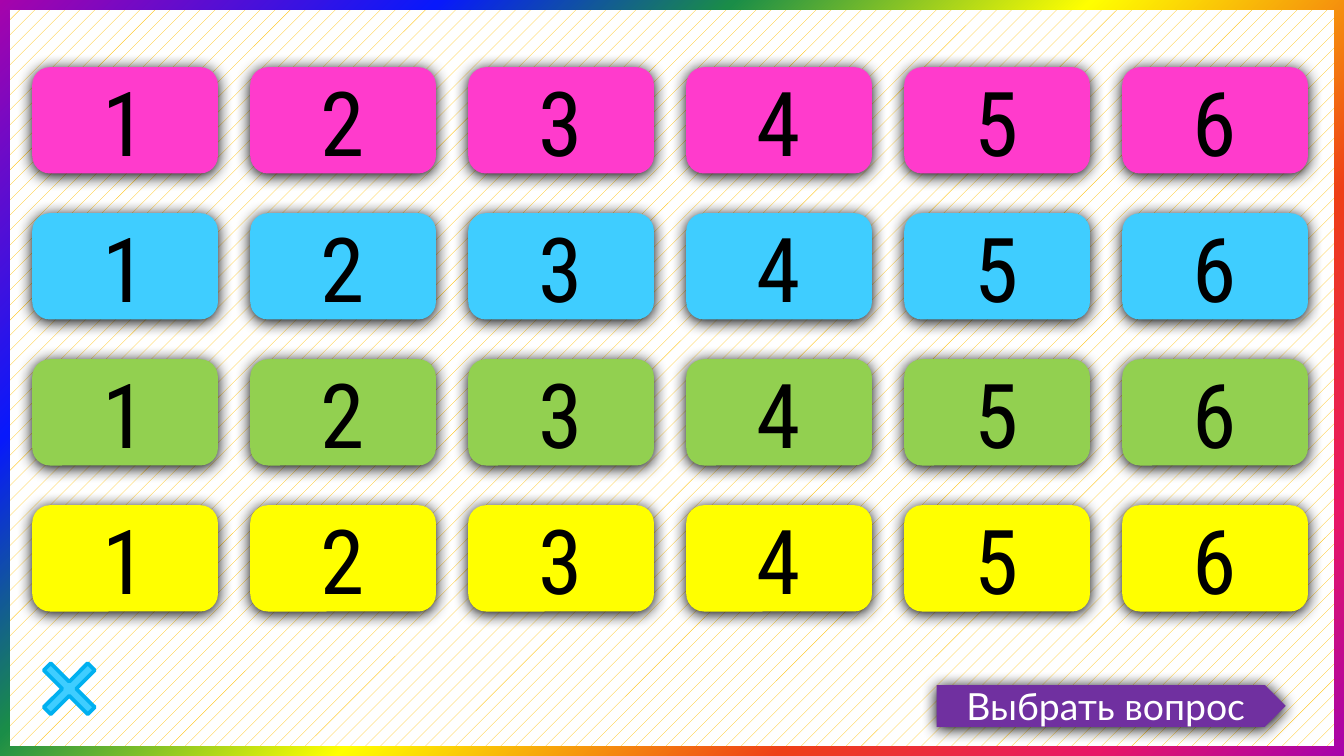
from dataclasses import dataclass

import lxml.etree
import pptx
import pptx.dml.color
import pptx.enum.dml
import pptx.enum.shapes
import pptx.enum.text
import pptx.oxml.ns
import pptx.shapes.autoshape
import pptx.slide
import pptx.util

Cm = pptx.util.Cm
Pt = pptx.util.Pt
Preset = pptx.enum.shapes.MSO_SHAPE


@dataclass(frozen=True)
class Theme:
    rows: tuple[str, ...] = ("FF3BCC", "3FCDFF", "92D050", "FFFF00")
    rainbow: tuple[tuple[int, str], ...] = (
        (0, "A603AB"), (21, "0819FB"), (35, "1A8D48"), (52, "FFFF00"),
        (73, "EE3F17"), (88, "E81766"), (100, "A603AB"),
    )
    black: str = "000000"
    white: str = "FFFFFF"
    stripe: str = "FFC000"
    banner: str = "7030A0"
    cross: str = "3FCDFF"
    cross_line: str = "00B0F0"
    number_font: str = "Roboto Condensed"
    number_size: int = 48
    banner_font: str = "Lato"
    banner_size: int = 20


@dataclass(frozen=True)
class Box:
    left: float
    top: float
    width: float
    height: float


@dataclass(frozen=True)
class Label:
    text: str
    font: str
    size: int
    color: str


THEME = Theme()
SLIDE_WIDTH, SLIDE_HEIGHT = 25.4, 14.29
FIRST_TILE = Box(0.61, 1.27, 3.51, 2.01)
COLUMNS = 6
COLUMN_STEP, ROW_STEP = 4.12, 2.76


def rgb(color: str) -> pptx.dml.color.RGBColor:
    return pptx.dml.color.RGBColor.from_string(color)


def add_element(parent: lxml.etree._Element, tag: str, **attributes: object) -> lxml.etree._Element:
    values = {name: str(value) for name, value in attributes.items()}
    return lxml.etree.SubElement(parent, pptx.oxml.ns.qn(tag), values)


def add_preset(slide: pptx.slide.Slide, preset: Preset, box: Box) -> pptx.shapes.autoshape.Shape:
    """Add a preset shape without line or shadow."""
    shape = slide.shapes.add_shape(
        preset, Cm(box.left), Cm(box.top), Cm(box.width), Cm(box.height))
    shape.shadow.inherit = False
    shape.line.fill.background()
    return shape


def add_shadow(shape: pptx.shapes.autoshape.Shape) -> None:
    effects = shape._element.spPr.find(pptx.oxml.ns.qn("a:effectLst"))
    shadow = add_element(effects, "a:outerShdw", blurRad=Pt(8.5), dist=Pt(1),
                         dir=90 * 60000, algn="t", rotWithShape=0)
    add_element(shadow, "a:srgbClr", val=THEME.black)


def add_button(slide: pptx.slide.Slide, preset: Preset, box: Box, fill: str, label: Label) -> None:
    """Add a shadowed shape with a centred label."""
    shape = add_preset(slide, preset, box)
    shape.fill.solid()
    shape.fill.fore_color.rgb = rgb(fill)
    add_shadow(shape)
    frame = shape.text_frame
    frame.word_wrap = True
    frame.vertical_anchor = pptx.enum.text.MSO_ANCHOR.MIDDLE
    paragraph = frame.paragraphs[0]
    paragraph.alignment = pptx.enum.text.PP_ALIGN.CENTER
    run = paragraph.add_run()
    run.text = label.text
    run.font.name = label.font
    run.font.size = Pt(label.size)
    run.font.color.rgb = rgb(label.color)


def add_rainbow_frame(slide: pptx.slide.Slide) -> None:
    shape = add_preset(slide, Preset.FRAME, Box(0, 0, SLIDE_WIDTH, SLIDE_HEIGHT))
    shape.adjustments[0] = 0.013
    shape.fill.gradient()
    shape.fill.gradient_angle = 315
    stops = shape._element.spPr.find(".//" + pptx.oxml.ns.qn("a:gsLst"))
    for stop in list(stops):
        stops.remove(stop)
    for percent, color in THEME.rainbow:
        stop = add_element(stops, "a:gs", pos=percent * 1000)
        add_element(stop, "a:srgbClr", val=color)


def add_cross(slide: pptx.slide.Slide) -> None:
    shape = add_preset(slide, Preset.MATH_MULTIPLY, Box(0.51, 12.22, 1.6, 1.6))
    shape.adjustments[0] = 0.118
    shape.fill.solid()
    shape.fill.fore_color.rgb = rgb(THEME.cross)
    shape.line.color.rgb = rgb(THEME.cross_line)
    shape.line.width = Pt(2)


def main() -> None:
    presentation = pptx.Presentation()
    presentation.slide_width = Cm(SLIDE_WIDTH)
    presentation.slide_height = Cm(SLIDE_HEIGHT)
    slide = presentation.slides.add_slide(presentation.slide_layouts[6])

    # Patterned background and border
    background = slide.background.fill
    background.patterned()
    background.pattern = pptx.enum.dml.MSO_PATTERN.PERCENT_10
    background.fore_color.rgb = rgb(THEME.stripe)
    background.back_color.rgb = rgb(THEME.white)
    add_rainbow_frame(slide)

    # Question tiles: one colour per row
    for row, color in enumerate(THEME.rows):
        for column in range(COLUMNS):
            box = Box(FIRST_TILE.left + column * COLUMN_STEP,
                      FIRST_TILE.top + row * ROW_STEP,
                      FIRST_TILE.width, FIRST_TILE.height)
            label = Label(str(column + 1), THEME.number_font, THEME.number_size, THEME.black)
            add_button(slide, Preset.ROUNDED_RECTANGLE, box, color, label)

    # Prompt and close button
    prompt = Label("Выбрать вопрос", THEME.banner_font, THEME.banner_size, THEME.white)
    add_button(slide, Preset.PENTAGON, Box(17.7, 12.95, 6.6, 0.79), THEME.banner, prompt)
    add_cross(slide)

    presentation.save("out.pptx")


if __name__ == "__main__":
    main()
